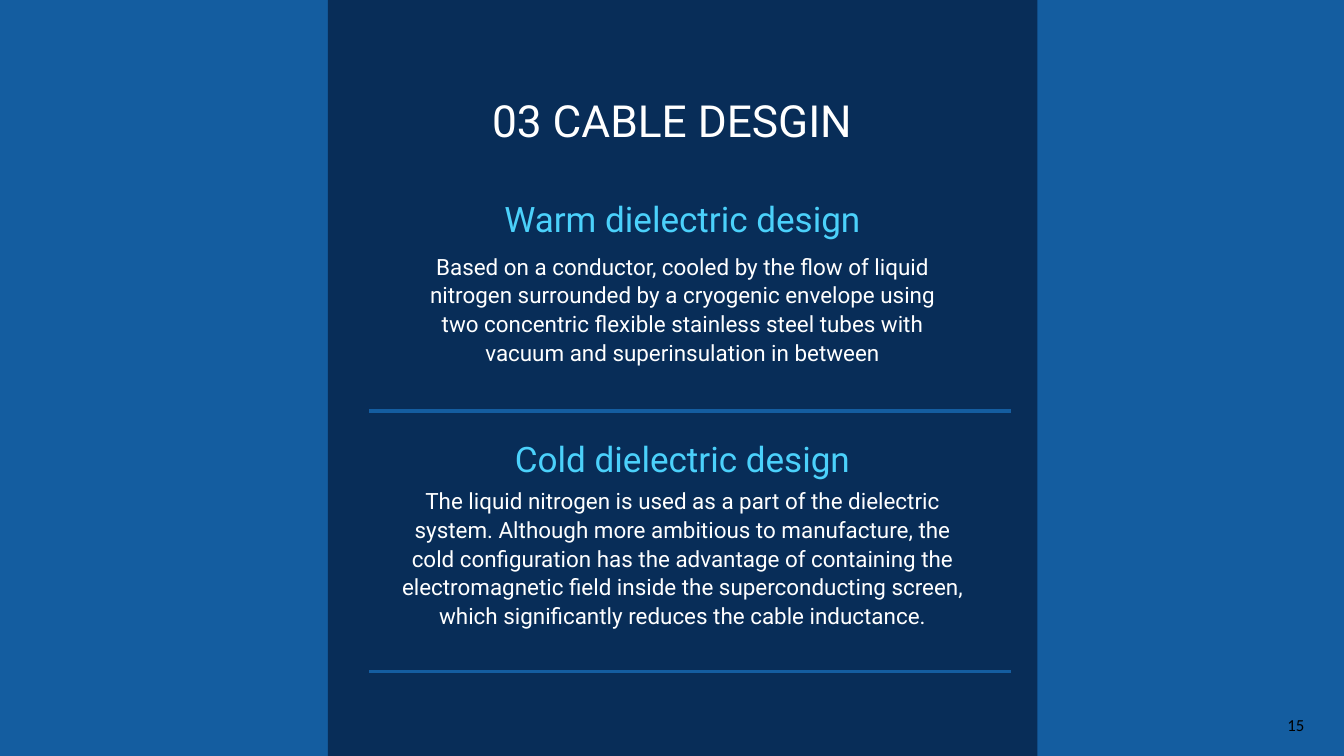
from dataclasses import dataclass

import pptx
import pptx.dml.color
import pptx.enum.shapes
import pptx.enum.text
import pptx.oxml.ns
import pptx.util
from lxml import etree
from pptx.dml.color import RGBColor
from pptx.util import Inches

BLUE = RGBColor(0x14, 0x5D, 0xA0)
NAVY = RGBColor(0x05, 0x1D, 0x40)
CYAN = RGBColor(0x4B, 0xD1, 0xFB)
WHITE = RGBColor(0xFF, 0xFF, 0xFF)
BLACK = RGBColor(0x00, 0x00, 0x00)


@dataclass(frozen=True)
class Style:
    size: float
    color: RGBColor
    leading: float


TITLE = Style(47.4, WHITE, 56.9)
HEADING = Style(37.6, CYAN, 51.9)
BODY = Style(24, WHITE, 30.6)


@dataclass(frozen=True)
class Caption:
    text: str
    left: float
    top: float
    width: float
    height: float
    style: Style


@dataclass(frozen=True)
class Design:
    heading: Caption
    body: Caption
    rule_y: float


DESIGNS = [
    Design(
        Caption("Warm dielectric design", 6.96, 2.84, 6.39, 0.69, HEADING),
        Caption(
            "Based on a conductor, cooled by the flow of liquid nitrogen "
            "surrounded by a cryogenic envelope using two concentric flexible "
            "stainless steel tubes with vacuum and superinsulation in between",
            6.25, 3.74, 7.81, 1.73, BODY,
        ),
        6.12,
    ),
    Design(
        Caption("Cold dielectric design", 6.25, 6.42, 7.81, 0.69, HEADING),
        Caption(
            "The liquid nitrogen is used as a part of the dielectric system. "
            "Although more ambitious to manufacture, the cold configuration has "
            "the advantage of containing the electromagnetic field inside the "
            "superconducting screen, which significantly reduces the cable "
            "inductance.",
            5.93, 7.23, 8.45, 2.6, BODY,
        ),
        9.99,
    ),
]


def add_panel(slide: pptx.slide.Slide) -> None:
    panel = slide.shapes.add_shape(
        pptx.enum.shapes.MSO_SHAPE.RECTANGLE,
        Inches(4.88), Inches(0), Inches(10.56), Inches(11.25),
    )
    panel.shadow.inherit = False
    panel.line.fill.background()
    panel.fill.solid()
    panel.fill.fore_color.rgb = NAVY
    # 75% opacity lets the background tint the panel
    color = panel.fill._xPr.find(".//" + pptx.oxml.ns.qn("a:srgbClr"))
    etree.SubElement(color, pptx.oxml.ns.qn("a:alpha"), val="75000")


def add_caption(slide: pptx.slide.Slide, caption: Caption) -> None:
    box = slide.shapes.add_textbox(
        Inches(caption.left), Inches(caption.top),
        Inches(caption.width), Inches(caption.height),
    )
    frame = box.text_frame
    frame.word_wrap = True
    frame.margin_left = frame.margin_right = Inches(0)
    frame.margin_top = frame.margin_bottom = Inches(0)
    paragraph = frame.paragraphs[0]
    paragraph.text = caption.text
    paragraph.alignment = pptx.enum.text.PP_ALIGN.CENTER
    paragraph.line_spacing = pptx.util.Pt(caption.style.leading)
    paragraph.font.name = "Roboto"
    paragraph.font.size = pptx.util.Pt(caption.style.size)
    paragraph.font.color.rgb = caption.style.color


def add_rule(slide: pptx.slide.Slide, y: float) -> None:
    rule = slide.shapes.add_connector(
        pptx.enum.shapes.MSO_CONNECTOR.STRAIGHT,
        Inches(5.49), Inches(y), Inches(15.04), Inches(y),
    )
    rule.line.color.rgb = BLUE
    rule.line.width = pptx.util.Pt(3.75)
    etree.SubElement(rule._element.spPr, pptx.oxml.ns.qn("a:effectLst"))


def add_page_number(slide: pptx.slide.Slide, number: int) -> None:
    box = slide.shapes.add_textbox(
        Inches(19.06), Inches(10.59), Inches(0.46), Inches(0.4)
    )
    box.text_frame.word_wrap = False
    paragraph = box.text_frame.paragraphs[0]
    paragraph.text = str(number)
    paragraph.font.name = "Calibri"
    paragraph.font.size = pptx.util.Pt(18)
    paragraph.font.color.rgb = BLACK


def main() -> None:
    deck = pptx.Presentation()
    deck.slide_width = Inches(20)
    deck.slide_height = Inches(11.25)
    slide = deck.slides.add_slide(deck.slide_layouts[6])

    # Background and central panel
    slide.background.fill.solid()
    slide.background.fill.fore_color.rgb = BLUE
    add_panel(slide)

    # Title
    add_caption(slide, Caption("03 CABLE DESGIN", 5.49, 1.39, 9.02, 0.78, TITLE))

    # Each design closes with a rule
    for design in DESIGNS:
        add_caption(slide, design.heading)
        add_caption(slide, design.body)
        add_rule(slide, design.rule_y)

    add_page_number(slide, 15)
    deck.save("out.pptx")


if __name__ == "__main__":
    main()
